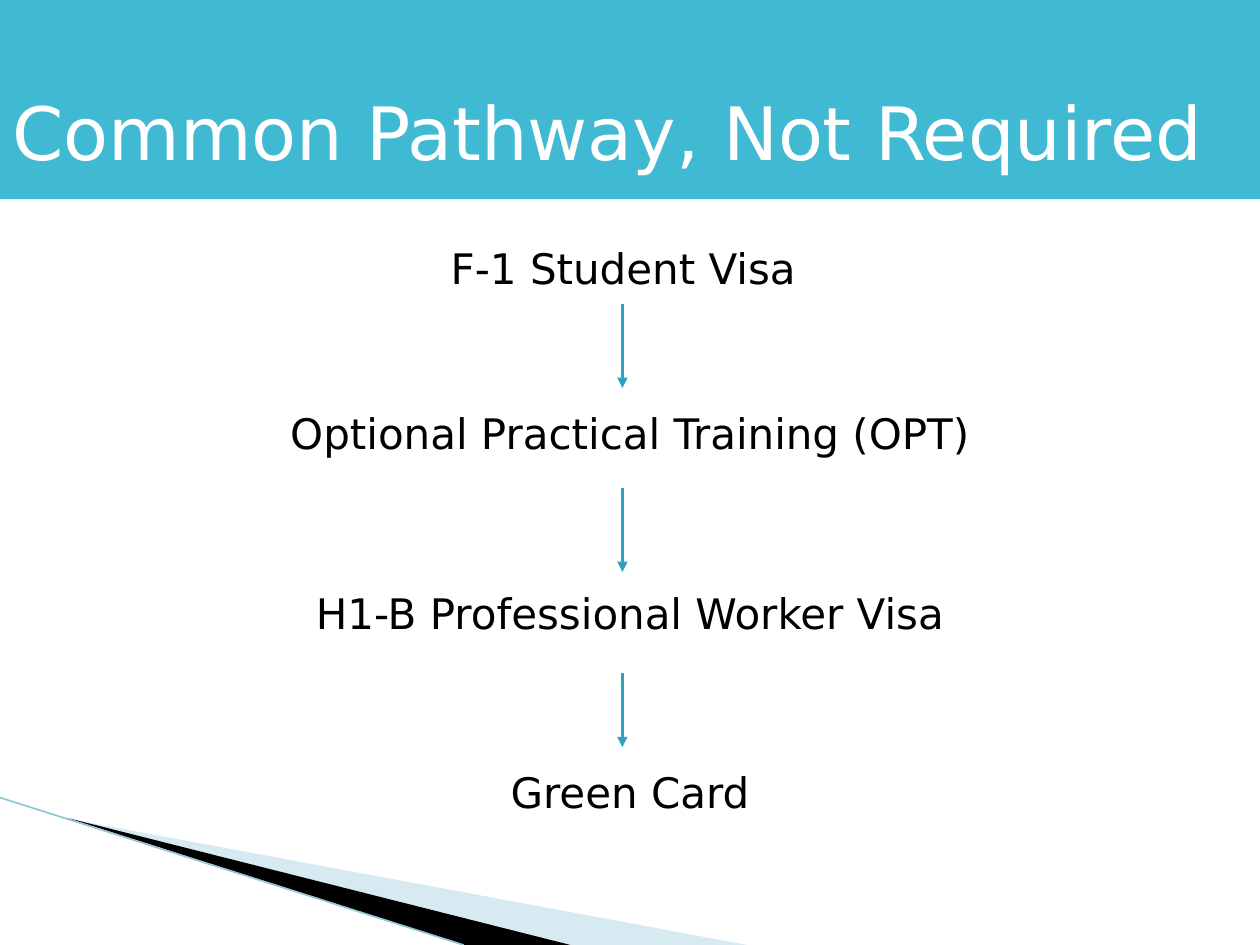
from lxml import etree
from pptx import Presentation
from pptx.dml.color import RGBColor
from pptx.enum.shapes import MSO_CONNECTOR, MSO_SHAPE
from pptx.enum.text import MSO_ANCHOR, PP_ALIGN
from pptx.oxml.ns import qn
from pptx.util import Inches, Pt

STRAIGHT = MSO_CONNECTOR.STRAIGHT
RECTANGLE = MSO_SHAPE.RECTANGLE
TOP, BOTTOM = MSO_ANCHOR.TOP, MSO_ANCHOR.BOTTOM
LEFT, CENTER = PP_ALIGN.LEFT, PP_ALIGN.CENTER

FONT = "DejaVu Sans"
COLORS = {
    "band": "40BAD2",
    "title": "FFFFFF",
    "body": "000000",
    "arrow": "2DA2BF",
    "pale_wedge": "9CCADC",
    "dark_wedge": "000000",
    "edge": "93C5D8",
}
COLUMNS, ROWS = 100, 75
CELL = Inches(0.1)


def grid(*cells):
    """Turn counts of grid cells into lengths."""
    return [round(cell * CELL) for cell in cells]


def rgb(name):
    return RGBColor.from_string(COLORS[name])


def write(frame, lines, *, size, color, align=LEFT, anchor=TOP, gaps=(), bottom=0.05):
    """Fill a frame with one paragraph per line; gaps are the points before each."""
    frame.word_wrap = True
    frame.vertical_anchor = anchor
    frame.margin_bottom = Inches(bottom)
    for index, line in enumerate(lines):
        paragraph = frame.paragraphs[0] if index == 0 else frame.add_paragraph()
        paragraph.alignment = align
        paragraph.line_spacing = 0.9
        if gaps and gaps[index]:
            paragraph.space_before = Pt(gaps[index])
        run = paragraph.add_run()
        run.text = line
        run.font.name = FONT
        run.font.size = Pt(size)
        run.font.color.rgb = rgb(color)


class PathwaySlide:
    """Holds the grid style and the slide being drawn."""

    def __init__(self, deck):
        deck.slide_width, deck.slide_height = grid(COLUMNS, ROWS)
        self.shapes = deck.slides.add_slide(deck.slide_layouts[6]).shapes

    def paint(self, shape, color):
        shape.shadow.inherit = False
        shape.fill.solid()
        shape.fill.fore_color.rgb = rgb(color)
        shape.line.fill.background()

    def wedge(self, points, color, opacity=100):
        start, *others = [grid(*point) for point in points]
        builder = self.shapes.build_freeform(*start)
        builder.add_line_segments(others, close=True)
        shape = builder.convert_to_shape()
        self.paint(shape, color)
        if opacity < 100:
            tint = shape.fill._xPr.find(".//" + qn("a:srgbClr"))
            etree.SubElement(tint, qn("a:alpha"), val=str(opacity * 1000))

    def line(self, start, end, color, width, arrow=False):
        connector = self.shapes.add_connector(STRAIGHT, *grid(*start, *end))
        connector.line.color.rgb = rgb(color)
        connector.line.width = Pt(width)
        if arrow:
            etree.SubElement(connector.line._get_or_add_ln(), qn("a:tailEnd"), type="triangle")
        etree.SubElement(connector._element.spPr, qn("a:effectLst"))

    def band(self, title, height):
        shape = self.shapes.add_shape(RECTANGLE, *grid(0, 0, COLUMNS, height))
        self.paint(shape, "band")
        write(shape.text_frame, [title], size=42, color="title", anchor=BOTTOM, bottom=0.18)

    def steps(self, lines, top, height, gaps):
        box = self.shapes.add_textbox(*grid(0, top, COLUMNS, height))
        write(box.text_frame, lines, size=24, color="body", align=CENTER, gaps=gaps)


def main():
    deck = Presentation()
    slide = PathwaySlide(deck)

    slide.wedge([(5.5, 65), (59.3, 75), (45.4, 75)], "pale_wedge", opacity=40)
    slide.wedge([(5.3, 64.9), (45.3, 75), (36.9, 75)], "dark_wedge")
    slide.line((0, 63.3), (36.8, 75), "edge", 0.95)

    slide.steps(
        ["F-1 Student Visa ", "Optional Practical Training (OPT)",
         "H1-B Professional Worker Visa", "Green Card"],
        top=19.2, height=47.3, gaps=(0, 68.6, 76.6, 76.6),
    )
    for top, bottom in ((24.1, 30.8), (38.7, 45.4), (53.4, 59.3)):
        slide.line((49.4, top), (49.4, bottom), "arrow", 1.5, arrow=True)

    slide.band("Common Pathway, Not Required", height=15.8)
    deck.save("out.pptx")


if __name__ == "__main__":
    main()
